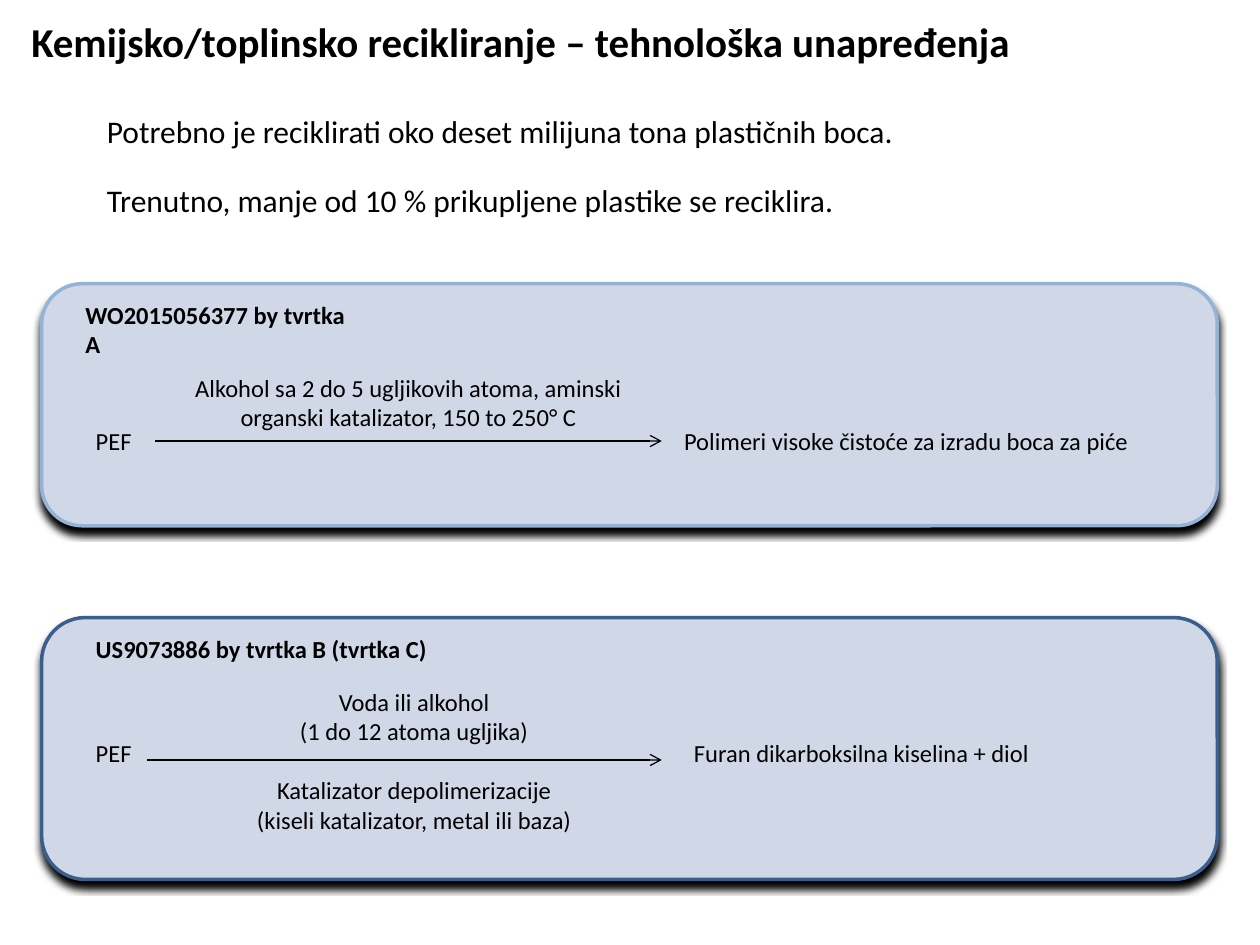
"""Build the slide on technological advances in chemical and thermal recycling."""
from dataclasses import dataclass

from lxml.etree import SubElement
from pptx import Presentation
from pptx.dml.color import RGBColor
from pptx.enum.shapes import MSO_CONNECTOR, MSO_SHAPE
from pptx.enum.text import MSO_ANCHOR, PP_ALIGN
from pptx.oxml.ns import qn
from pptx.util import Cm, Pt


@dataclass(frozen=True)
class Theme:
    font: str = "Calibri"
    text: str = "000000"
    panel: str = "D0D8E8"
    title_size: float = 23.4
    body_size: float = 18
    label_size: float = 14
    border_width: float = 2
    arrow_width: float = 0.75


THEME = Theme()
TITLE = "Kemijsko/toplinsko recikliranje – tehnološka unapređenja"
FACTS = [
    "Potrebno je reciklirati oko deset milijuna tona plastičnih boca.",
    "Trenutno, manje od 10 % prikupljene plastike se reciklira.",
]
PROCESSES = [
    {
        "panel": (0.84, 5.72, 23.7, 4.88),
        "border": "95B3D7",
        "patent": ("WO2015056377 by tvrtka A", (1.47, 5.92, 5.82, 0.86)),
        "feed": ("PEF", (1.68, 8.46, 1.45, 0.86)),
        "conditions": (
            ["Alkohol sa 2 do 5 ugljikovih atoma, aminski organski katalizator, 150 to 250° C"],
            (3.56, 7.39, 9.35, 1.45),
        ),
        "product": ("Polimeri visoke čistoće za izradu boca za piće", (13.54, 8.46, 10.82, 0.86)),
        "arrow": (3.13, 13.34, 8.89),
        "arrow_meets_feed": True,
    },
    {
        "panel": (0.84, 12.45, 23.7, 5.28),
        "border": "3A5F8C",
        "patent": ("US9073886 by tvrtka B (tvrtka C)", (1.68, 12.65, 11.23, 0.86)),
        "feed": ("PEF", (1.68, 14.76, 1.45, 0.86)),
        "conditions": (
            [
                "Voda ili alkohol",
                "(1 do 12 atoma ugljika)",
                "Katalizator depolimerizacije",
                "(kiseli katalizator, metal ili baza)",
            ],
            (3.56, 13.72, 9.58, 3.25),
        ),
        "product": ("Furan dikarboksilna kiselina + diol", (13.74, 14.76, 10.62, 0.86)),
        "arrow": (2.97, 13.34, 15.32),
        "arrow_meets_feed": False,
    },
]
LINES_ABOVE_ARROW = 2


def cm(*lengths):
    return [Cm(length) for length in lengths]


def place(holder, box):
    holder.left, holder.top, holder.width, holder.height = cm(*box)


def write(frame, lines, size, bold=False, align=PP_ALIGN.LEFT):
    frame.word_wrap = True
    frame.text = "\n".join(lines)
    for paragraph in frame.paragraphs:
        paragraph.alignment = align
        for run in paragraph.runs:
            run.font.name = THEME.font
            run.font.size = Pt(size)
            run.font.bold = bold
            run.font.color.rgb = RGBColor.from_string(THEME.text)


def add_panel(shapes, box, border):
    panel = shapes.add_shape(MSO_SHAPE.ROUNDED_RECTANGLE, *cm(*box))
    panel.fill.solid()
    panel.fill.fore_color.rgb = RGBColor.from_string(THEME.panel)
    panel.line.color.rgb = RGBColor.from_string(border)
    panel.line.width = Pt(THEME.border_width)
    panel.shadow.inherit = False
    effects = panel._element.spPr.find(qn("a:effectLst"))
    shadow = SubElement(effects, qn("a:outerShdw"), blurRad=str(Pt(4)), dist=str(Pt(4)),
                        dir="5400000", rotWithShape="0")
    SubElement(shadow, qn("a:srgbClr"), val="000000")


def add_label(shapes, lines, box, **style):
    label = shapes.add_textbox(*cm(*box))
    write(label.text_frame, lines, THEME.label_size, **style)
    return label


def add_arrow(shapes, start, end, height):
    arrow = shapes.add_connector(MSO_CONNECTOR.STRAIGHT, *cm(start, height, end, height))
    arrow.line.color.rgb = RGBColor.from_string(THEME.text)
    arrow.line.width = Pt(THEME.arrow_width)
    SubElement(arrow.line._get_or_add_ln(), qn("a:tailEnd"), type="arrow")
    SubElement(arrow._element.spPr, qn("a:effectLst"))
    return arrow


def add_process(slide, process):
    shapes = slide.shapes.add_group_shape().shapes
    add_panel(shapes, process["panel"], process["border"])
    patent, patent_box = process["patent"]
    add_label(shapes, [patent], patent_box, bold=True)
    feed, feed_box = process["feed"]
    feed_label = add_label(shapes, [feed], feed_box)
    conditions, conditions_box = process["conditions"]
    conditions_label = add_label(shapes, conditions, conditions_box, align=PP_ALIGN.CENTER)
    for paragraph in conditions_label.text_frame.paragraphs[LINES_ABOVE_ARROW:][:1]:
        paragraph.space_before = Pt(17)
    product, product_box = process["product"]
    add_label(shapes, [product], product_box)
    arrow = add_arrow(shapes, *process["arrow"])
    if process["arrow_meets_feed"]:
        arrow.begin_connect(feed_label, 3)


def add_title(slide):
    title = slide.shapes.title
    place(title, (0, 0.13, 25.4, 1.4))
    write(title.text_frame, [TITLE], THEME.title_size, bold=True)
    title.text_frame.margin_left = Cm(0.63)
    title.text_frame.vertical_anchor = MSO_ANCHOR.MIDDLE


def add_facts(slide):
    facts = slide.placeholders[1]
    place(facts, (1.9, 2.13, 20.2, 2.44))
    write(facts.text_frame, FACTS, THEME.body_size, align=PP_ALIGN.JUSTIFY)
    for paragraph in facts.text_frame.paragraphs:
        paragraph.space_before = Pt(6)
        paragraph.space_after = Pt(12)
        properties = paragraph._p.get_or_add_pPr()
        properties.set("marL", "0")
        properties.set("indent", "0")
        SubElement(properties, qn("a:buNone"))


def main():
    presentation = Presentation()
    presentation.slide_width, presentation.slide_height = cm(25.4, 19.05)
    slide = presentation.slides.add_slide(presentation.slide_layouts[1])
    add_title(slide)
    add_facts(slide)
    for process in PROCESSES:
        add_process(slide, process)
    presentation.save("out.pptx")


if __name__ == "__main__":
    main()
